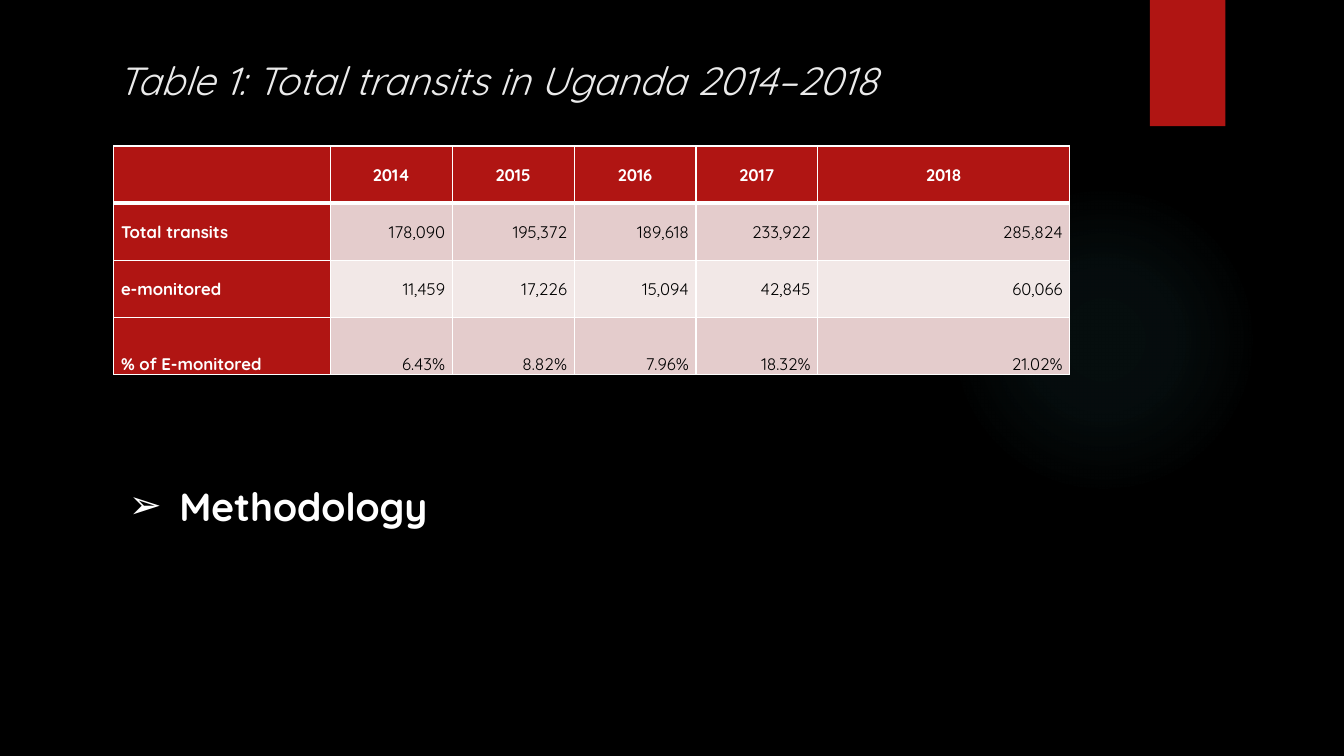
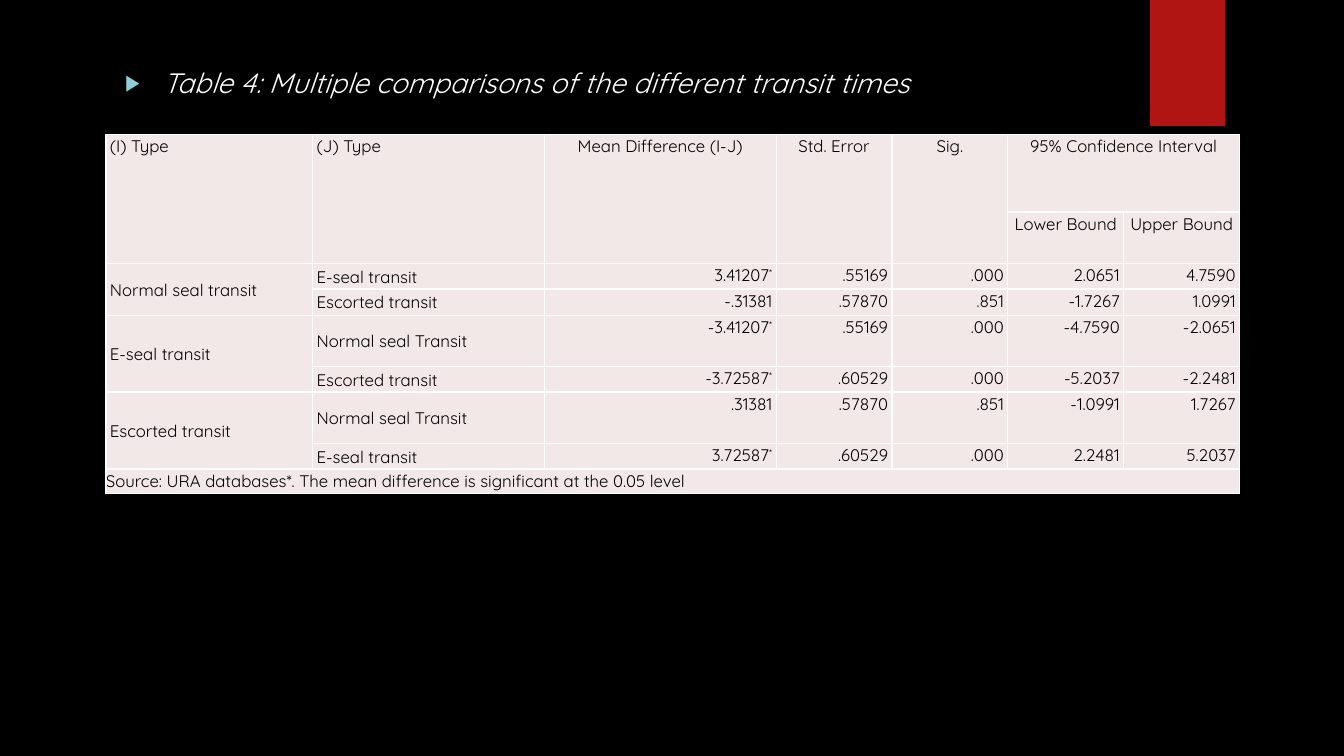
from lxml.etree import SubElement as Sub
from pptx import Presentation
from pptx.dml.color import RGBColor as RGB
from pptx.enum.shapes import MSO_SHAPE as Shape
from pptx.enum.text import MSO_ANCHOR as Anchor, MSO_AUTO_SIZE as Auto, PP_ALIGN as Align
from pptx.oxml import parse_xml
from pptx.oxml.ns import nsdecls, qn
from pptx.util import Cm, Pt

# Content
TITLE1 = "Table 1: Total transits in Uganda 2014–2018"
TITLE2 = "Table 4: Multiple comparisons of the different transit times"
NEXT = "Methodology"
TRANSITS = [
    ["", "2014", "2015", "2016", "2017", "2018"],
    ["Total transits", "178,090", "195,372", "189,618", "233,922", "285,824"],
    ["e-monitored", "11,459", "17,226", "15,094", "42,845", "60,066"],
    ["% of E-monitored", "6.43%", "8.82%", "7.96%", "18.32%", "21.02%"],
]
TIMES = [
    ["(I) Type", "(J) Type", "Mean Difference (I-J)", "Std. Error", "Sig.",
     "95% Confidence Interval", ""],
    ["", "", "", "", "", "Lower Bound", "Upper Bound"],
    ["Normal seal transit", "E-seal transit", "3.41207*", ".55169", ".000", "2.0651", "4.7590"],
    ["", "Escorted transit", "-.31381", ".57870", ".851", "-1.7267", "1.0991"],
    ["E-seal transit", "Normal seal Transit", "-3.41207*", ".55169", ".000", "-4.7590", "-2.0651"],
    ["", "Escorted transit", "-3.72587*", ".60529", ".000", "-5.2037", "-2.2481"],
    ["Escorted transit", "Normal seal Transit", ".31381", ".57870", ".851", "-1.0991", "1.7267"],
    ["", "E-seal transit", "3.72587*", ".60529", ".000", "2.2481", "5.2037"],
    ["Source: URA databases*. The mean difference is significant at the 0.05 level"] + [""] * 6,
]
# First and last cell of each merged block, as (row, column)
SPANS = [((0, c), (1, c)) for c in range(5)]
SPANS += [((r, 0), (r + 1, 0)) for r in (2, 4, 6)]
SPANS += [((0, 5), (0, 6)), ((8, 0), (8, 6))]

# Shared style
FONT = "Quicksand"
HEX = {"back": "000000", "red": "B01513", "glow": "50B9C1", "mark": "8AD0D6",
       "title": "EBEBEB", "white": "FFFFFF", "ink": "000000",
       "rose": "E4CCCC", "pale": "F2E8E7"}


def color(key):
    return RGB.from_string(HEX[key])


def add_run(para, text, size, key, bold=False, italic=False):
    run = para.add_run()
    run.text = text
    font = run.font
    font.name, font.size, font.bold, font.italic = FONT, Pt(size), bold, italic
    font.color.rgb = color(key)
    return run


def add_bullet(para, sign, indent, tint=None, scale=None):
    props = para._p.get_or_add_pPr()
    props.set("marL", str(Cm(indent)))
    props.set("indent", str(-Cm(indent)))
    if tint:
        Sub(Sub(props, qn("a:buClr")), qn("a:srgbClr")).set("val", HEX[tint])
    if scale:
        Sub(props, qn("a:buSzPct")).set("val", str(scale * 1000))
    Sub(props, qn("a:buFont")).set("typeface", "Arial")
    Sub(props, qn("a:buChar")).set("char", sign)


def place(shape, left, top, width, height):
    shape.left, shape.top = Cm(left), Cm(top)
    shape.width, shape.height = Cm(width), Cm(height)


def add_decor(slide):
    # Soft glow
    glow = slide.shapes.add_shape(Shape.OVAL, Cm(23.9), Cm(4.65), Cm(7.82), Cm(7.82))
    glow.shadow.inherit = False
    glow.line.fill.background()
    stops = "".join(
        f'<a:gs pos="{pos * 1000}"><a:srgbClr val="{HEX["glow"]}">'
        f'<a:alpha val="{alpha * 1000}"/></a:srgbClr></a:gs>'
        for pos, alpha in ((0, 7), (36, 6), (69, 0)))
    glow._element.spPr.find(qn("a:prstGeom")).addnext(parse_xml(
        f'<a:gradFill {nsdecls("a")}><a:gsLst>{stops}</a:gsLst><a:path path="circle">'
        '<a:fillToRect l="50000" t="50000" r="50000" b="50000"/></a:path></a:gradFill>'))
    # Red tab with a soft shadow
    tab = slide.shapes.add_shape(Shape.RECTANGLE, Cm(28.98), 0, Cm(1.9), Cm(3.18))
    tab.shadow.inherit = False
    tab.fill.solid()
    tab.fill.fore_color.rgb = color("red")
    tab.line.fill.background()
    tab._element.spPr.find(qn("a:effectLst")).append(parse_xml(
        f'<a:outerShdw {nsdecls("a")} blurRad="{Pt(3)}" dist="{Pt(2)}" dir="5400000">'
        '<a:srgbClr val="000000"><a:alpha val="45000"/></a:srgbClr></a:outerShdw>'))


def add_slide(deck, text, box, size, key, sign=None):
    slide = deck.slides.add_slide(deck.slide_layouts[5])
    add_decor(slide)
    title = slide.shapes.title
    place(title, *box)
    frame = title.text_frame
    frame.auto_size, frame.vertical_anchor = Auto.NONE, Anchor.TOP
    para = frame.paragraphs[0]
    para.alignment = Align.LEFT
    para.line_spacing = 1.07 if sign else 1.0
    if sign:
        add_bullet(para, sign, 0.95, "mark", 80)
    add_run(para, text, size, key, italic=True)
    return slide


def edge_cell(cell, top=1, bottom=1):
    props = cell._tc.get_or_add_tcPr()
    for i, (side, width) in enumerate(zip("LRTB", (1, 1, top, bottom))):
        props.insert(i, parse_xml(
            f'<a:ln{side} {nsdecls("a")} w="{Pt(width)}"><a:solidFill>'
            f'<a:srgbClr val="{HEX["white"]}"/></a:solidFill></a:ln{side}>'))


def add_table(slide, data, left, top, cols, rows, spans, style):
    """style(row, col) gives fill, ink, bold, align, anchor, inset, top and bottom edge."""
    table = slide.shapes.add_table(len(rows), len(cols), Cm(left), Cm(top),
                                   Cm(sum(cols)), Cm(sum(rows))).table
    table.first_row = table.horz_banding = False
    for col, width in zip(table.columns, cols):
        col.width = Cm(width)
    for row, height in zip(table.rows, rows):
        row.height = Cm(height)
    for r, line in enumerate(data):
        for c, text in enumerate(line):
            fill, ink, bold, align, anchor, inset, over, under = style(r, c)
            cell = table.cell(r, c)
            cell.fill.solid()
            cell.fill.fore_color.rgb = color(fill)
            cell.vertical_anchor = anchor
            cell.margin_left = cell.margin_right = Cm(inset)
            cell.margin_top = cell.margin_bottom = 0
            para = cell.text_frame.paragraphs[0]
            para.alignment, para.line_spacing = align, Pt(16)
            star = text.endswith("*")
            if text:
                add_run(para, text.removesuffix("*"), 12, ink, bold)
            if star:
                run = add_run(para, "*", 12, ink, bold)
                run._r.get_or_add_rPr().set("baseline", "30000")
            edge_cell(cell, over, under)
    for first, last in spans:
        table.cell(*first).merge(table.cell(*last))


def style_transits(r, c):
    head = r == 0 or c == 0
    fill = "red" if head else ("rose" if r % 2 else "pale")
    align = Align.CENTER if r == 0 else (Align.RIGHT if c else Align.LEFT)
    anchor = Anchor.BOTTOM if r == 3 else Anchor.MIDDLE
    return (fill, "white" if head else "ink", head, align, anchor, 0.18,
            3 if r == 1 else 1, 3 if r == 0 else 1)


def style_times(r, c):
    align = Align.LEFT if c < 2 else (Align.CENTER if r < 2 else Align.RIGHT)
    anchor = Anchor.MIDDLE if c < 2 and 2 <= r < 8 else Anchor.TOP
    return "pale", "ink", False, align, anchor, 0 if r == 8 else 0.1, 1, 1


def main():
    deck = Presentation()
    deck.slide_width, deck.slide_height = Cm(33.87), Cm(19.05)
    back = deck.slide_master.background.fill
    back.solid()
    back.fore_color.rgb = color("back")

    # Slide 1: totals and the next topic
    slide = add_slide(deck, TITLE1, (2.7, 1.3, 23.4, 1.5), 28, "title")
    add_table(slide, TRANSITS, 2.87, 3.68, [5.46] + [3.07] * 4 + [6.35], [1.44] * 4,
              [], style_transits)
    box = slide.shapes.add_textbox(Cm(3), Cm(10.24), Cm(9.6), Cm(2.72))
    box.text_frame.word_wrap = True
    para = box.text_frame.paragraphs[0]
    para.line_spacing = 2.5
    add_bullet(para, "➢", 1.27)
    add_run(para, NEXT, 28, "white", bold=True)

    # Slide 2: comparisons
    slide = add_slide(deck, TITLE2, (2.9, 1.47, 21.2, 1.1), 20, "white", "▶")
    add_table(slide, TIMES, 2.67, 3.38, [5.21, 5.84, 5.84] + [2.92] * 4,
              [1.96, 1.3, 0.64, 0.66, 1.3, 0.64, 1.3, 0.64, 0.61], SPANS, style_times)

    deck.save("out.pptx")


if __name__ == "__main__":
    main()
